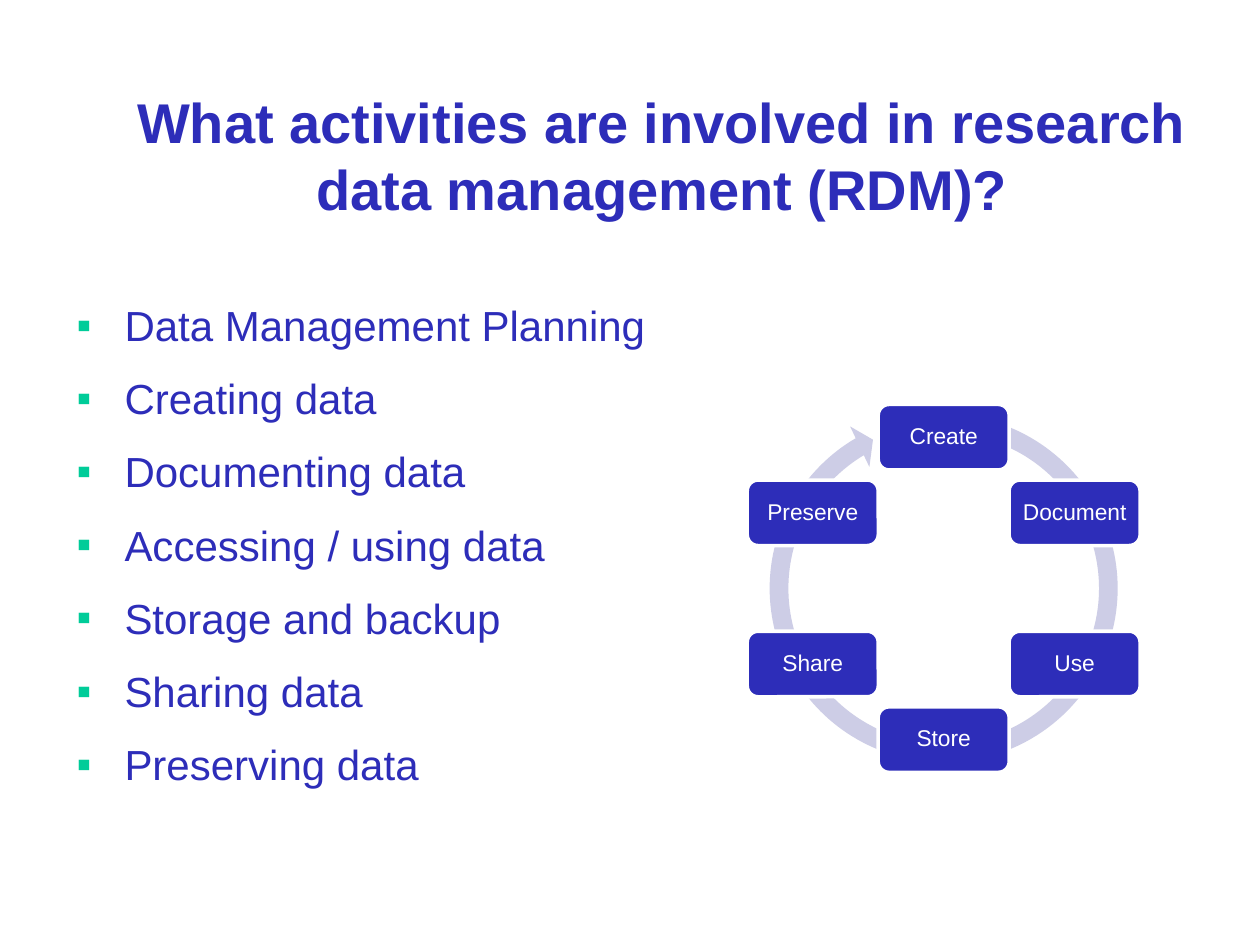
import math

import pptx
import pptx.dml.color
import pptx.enum.shapes
import pptx.enum.text
import pptx.util
from lxml import etree
from pptx.oxml.ns import qn

Inches, Pt = pptx.util.Inches, pptx.util.Pt
RGBColor = pptx.dml.color.RGBColor
Shape = pptx.enum.shapes.MSO_SHAPE
Align = pptx.enum.text.PP_ALIGN
Anchor = pptx.enum.text.MSO_ANCHOR

# Content
TITLE = "What activities are involved in research data management (RDM)?"
ACTIVITIES = ["Data Management Planning", "Creating data", "Documenting data",
              "Accessing / using data", "Storage and backup", "Sharing data",
              "Preserving data"]
STAGES = ["Create", "Document", "Use", "Store", "Share", "Preserve"]  # clockwise

# Look
BLUE = RGBColor(0x2D, 0x2D, 0xB9)
PALE = RGBColor(0xCD, 0xCD, 0xE6)
WHITE = RGBColor(0xFF, 0xFF, 0xFF)
BULLET_GREEN = "00CC99"
TITLE_FONT = {"name": "Arial", "size": Pt(32), "bold": True}
BODY_FONT = {"name": "Arial", "size": Pt(24)}
STAGE_FONT = {"name": "Arial", "size": Pt(13)}
BODY_SPACING = {"space_before": Pt(5), "space_after": Pt(8)}
STAGE_MARGINS = {"margin_left": Inches(0.05), "margin_right": Inches(0.05),
                 "margin_top": Inches(0.05), "margin_bottom": Inches(0.05)}

# Cycle geometry in inches
CENTER_X, CENTER_Y, RADIUS = 7.49, 4.67, 1.2
STAGE_W, STAGE_H = 1.04, 0.52
RING_SIZE = 2.97
RING_ADJUSTMENTS = [0.05, 3.13, 143.61, 170.5, 0.06]


def apply(target, values):
    for name, value in values.items():
        setattr(target, name, value)


def write(para, text, font, color):
    span = para.add_run()
    span.text = text
    apply(span.font, font)
    span.font.color.rgb = color


def add_bullet(para):
    props = para._p.get_or_add_pPr()
    props.set("marL", str(Inches(0.38)))
    props.set("indent", str(-Inches(0.38)))
    color = etree.SubElement(props, qn("a:buClr"))
    etree.SubElement(color, qn("a:srgbClr"), val=BULLET_GREEN)
    etree.SubElement(props, qn("a:buFont"), typeface="Arial")
    etree.SubElement(props, qn("a:buChar"), char="▪")


def add_centered(page, kind, x, y, width, height, color):
    shape = page.shapes.add_shape(kind, Inches(x - width / 2), Inches(y - height / 2),
                                  Inches(width), Inches(height))
    shape.shadow.inherit = False
    shape.fill.solid()
    shape.fill.fore_color.rgb = color
    return shape


deck = pptx.Presentation()
deck.slide_width, deck.slide_height = Inches(10), Inches(7.5)
page = deck.slides.add_slide(deck.slide_layouts[5])

# Title
title = page.shapes.title
apply(title, {"left": Inches(0.51), "top": Inches(0.76),
              "width": Inches(9.49), "height": Inches(0.94)})
apply(title.text_frame, {"vertical_anchor": Anchor.MIDDLE, "word_wrap": True,
                         "auto_size": pptx.enum.text.MSO_AUTO_SIZE.NONE})
title_para = title.text_frame.paragraphs[0]
title_para.alignment = Align.CENTER
write(title_para, TITLE, TITLE_FONT, BLUE)

# Bulleted activities
box = page.shapes.add_textbox(Inches(0.51), Inches(2.33), Inches(9.21), Inches(4.74))
box.text_frame.word_wrap = True
for index, activity in enumerate(ACTIVITIES):
    para = box.text_frame.add_paragraph() if index else box.text_frame.paragraphs[0]
    apply(para, BODY_SPACING)
    add_bullet(para)
    write(para, activity, BODY_FONT, BLUE)

# Ring arrow behind the stages
ring = add_centered(page, Shape.CIRCULAR_ARROW, CENTER_X, CENTER_Y,
                    RING_SIZE, RING_SIZE, PALE)
ring.line.fill.background()
for index, value in enumerate(RING_ADJUSTMENTS):
    ring.adjustments[index] = value

# Stages, evenly spaced clockwise from the top
for index, stage in enumerate(STAGES):
    angle = math.tau * index / len(STAGES)
    card = add_centered(page, Shape.ROUNDED_RECTANGLE,
                        CENTER_X + RADIUS * math.sin(angle),
                        CENTER_Y - RADIUS * math.cos(angle), STAGE_W, STAGE_H, BLUE)
    card.line.color.rgb = WHITE
    card.line.width = Pt(2)
    apply(card.text_frame, {**STAGE_MARGINS, "vertical_anchor": Anchor.MIDDLE,
                            "word_wrap": True})
    para = card.text_frame.paragraphs[0]
    apply(para, {"alignment": Align.CENTER, "line_spacing": 0.9})
    write(para, stage, STAGE_FONT, WHITE)

deck.save("out.pptx")
